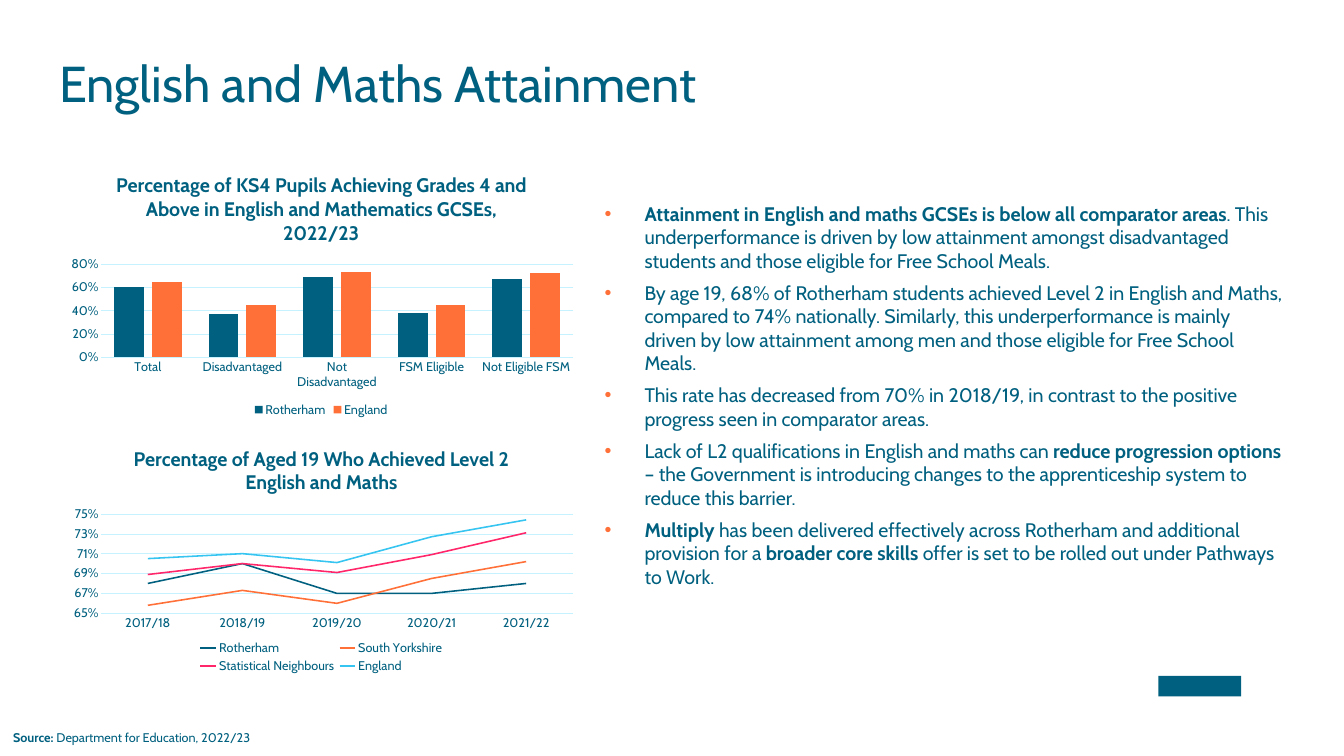
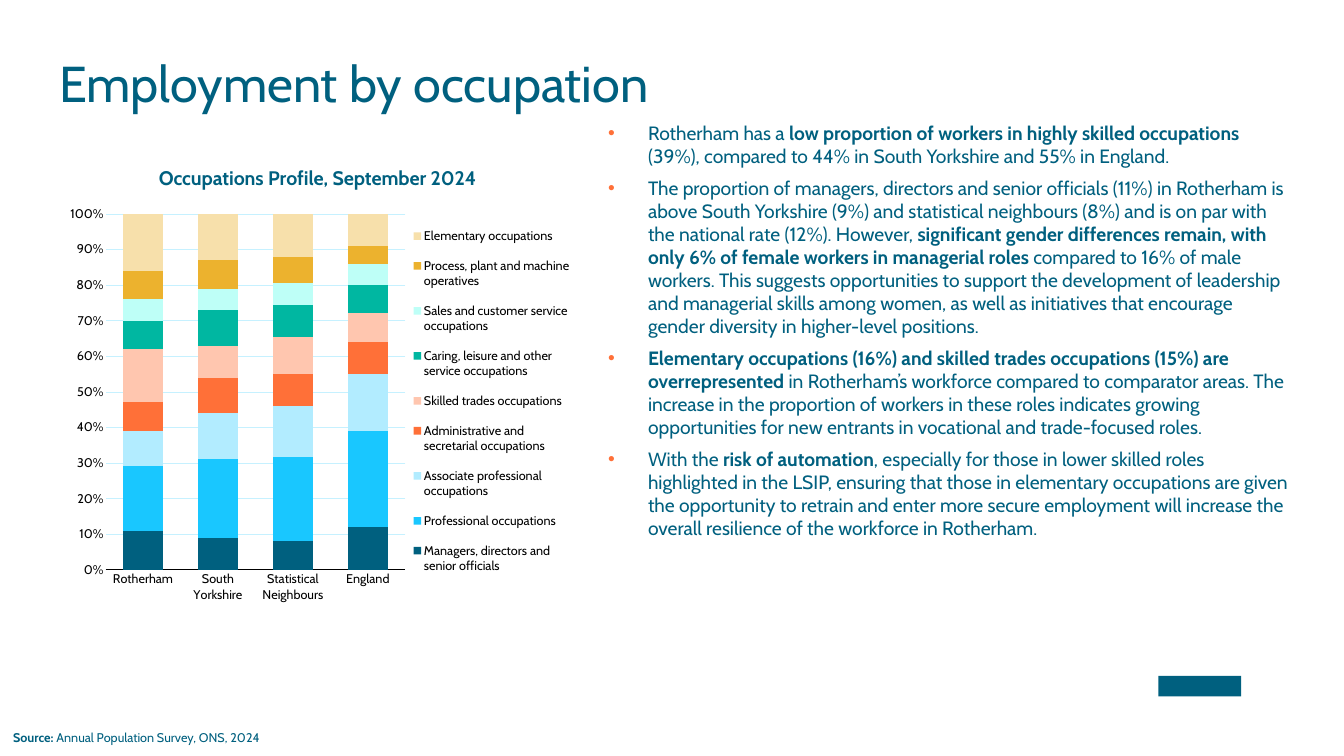
from lxml.etree import SubElement
from pptx import Presentation
from pptx.chart.data import CategoryChartData
from pptx.dml.color import RGBColor
from pptx.enum.chart import XL_CHART_TYPE as ChartType
from pptx.enum.chart import XL_LEGEND_POSITION as LegendPosition
from pptx.enum.chart import XL_TICK_MARK as TickMark
from pptx.enum.shapes import MSO_SHAPE as ShapeType
from pptx.enum.text import MSO_AUTO_SIZE as AutoSize
from pptx.oxml import parse_xml
from pptx.oxml.ns import nsdecls, qn
from pptx.util import Inches, Pt

FONT = "Cabin"
COLOURS = {
    "teal": "00607F", "orange": "FF7038", "pink": "FF266A", "blue": "36C5F0",
    "grid": "C6F1FF", "black": "000000", "sky": "19C7FF", "pale blue": "B2ECFF",
    "peach": "FFC6AF", "green": "00B7A1", "mint": "BEFFF7", "gold": "ECB22E",
    "sand": "F7E0AB",
}


def rgb(name):
    return RGBColor.from_string(COLOURS[name])


def style_font(font, size, colour="teal", bold=False):
    font.name, font.size, font.bold = FONT, Pt(size), bold
    font.color.rgb = rgb(colour)


def layout_element(x, y, width, height, inner=False):
    """Return a manual chart layout in fractions of the chart area."""
    layout = parse_xml(f"<c:layout {nsdecls('c')}><c:manualLayout/></c:layout>")
    settings = [("layoutTarget", "inner")] if inner else []
    settings += [("xMode", "edge"), ("yMode", "edge"),
                 ("x", x), ("y", y), ("w", width), ("h", height)]
    for tag, value in settings:
        SubElement(layout[0], qn(f"c:{tag}")).set("val", str(value))
    return layout


class Deck:
    """Holds the shared style and the slide being built."""

    def __init__(self):
        self.presentation = Presentation()
        self.presentation.slide_width = Inches(26.65)
        self.presentation.slide_height = Inches(15)
        self.slide = None

    def start_slide(self, title, source):
        self.slide = self.presentation.slides.add_slide(
            self.presentation.slide_layouts[6])
        self.logo_block()
        frame = self.text_box(1.17, 1.05, 22.99, 1.72)
        paragraph = frame.paragraphs[0]
        paragraph.line_spacing = Pt(85)
        self.add_runs(paragraph, title, 72)

        frame = self.text_box(0.16, 14.44, 13.32, 0.4, inset=None)
        frame.auto_size = AutoSize.SHAPE_TO_FIT_TEXT
        self.add_runs(frame.paragraphs[0], f"**Source: **{source}", 18)

    def logo_block(self):
        shape = self.slide.shapes.add_shape(
            ShapeType.RECTANGLE, Inches(22.97), Inches(13.41),
            Inches(1.64), Inches(0.41))
        shape.shadow.inherit = False
        shape.fill.solid()
        shape.fill.fore_color.rgb = rgb("teal")
        shape.line.fill.background()

    def text_box(self, left, top, width, height, inset=0):
        frame = self.slide.shapes.add_textbox(
            Inches(left), Inches(top), Inches(width), Inches(height)).text_frame
        frame.word_wrap = True
        if inset is not None:
            frame.margin_left = frame.margin_right = Inches(inset)
            frame.margin_top = frame.margin_bottom = Inches(inset)
        return frame

    def add_runs(self, paragraph, text, size):
        """Add the text as runs; parts between ** marks are bold."""
        for index, part in enumerate(text.split("**")):
            if part:
                run = paragraph.add_run()
                run.text = part
                style_font(run.font, size, bold=index % 2 == 1)

    def bullets(self, left, top, height, size, texts):
        frame = self.text_box(left, top, 13.5, height)
        for index, text in enumerate(texts):
            paragraph = frame.add_paragraph() if index else frame.paragraphs[0]
            paragraph.space_after = Pt(12)
            properties = paragraph._p.get_or_add_pPr()
            properties.set("marL", str(Inches(0.79)))
            properties.set("indent", str(-Inches(0.79)))
            colour = SubElement(properties, qn("a:buClr"))
            SubElement(colour, qn("a:srgbClr")).set("val", COLOURS["orange"])
            SubElement(properties, qn("a:buFont")).set("typeface", "Arial")
            SubElement(properties, qn("a:buChar")).set("char", "•")
            self.add_runs(paragraph, text, size)

    def chart(self, kind, box, title, categories, series, plot, legend=None,
              legend_side=LegendPosition.BOTTOM, scale=None, overlap=None,
              text="teal", axis="grid"):
        """Add a chart; series holds (name, colour, values), scale (min, max, step)."""
        data = CategoryChartData()
        data.categories = categories
        for name, _, values in series:
            data.add_series(name, values)
        chart = self.slide.shapes.add_chart(
            kind, *(Inches(length) for length in box), data).chart
        style_font(chart.font, 18, text)

        chart.has_title = True
        run = chart.chart_title.text_frame.paragraphs[0].add_run()
        run.text = title
        style_font(run.font, 28, bold=True)
        chart.chart_title.include_in_layout = False

        self.axes(chart, scale, text, axis)
        self.legend(chart, legend_side, legend, text)
        self.colour_series(chart, kind, series, overlap)

        plot_area = chart.element.xpath(".//c:plotArea")[0]
        for old in plot_area.findall(qn("c:layout")):
            plot_area.remove(old)
        plot_area.insert(0, layout_element(*plot, inner=True))

    def axes(self, chart, scale, text, axis_colour):
        for axis in (chart.category_axis, chart.value_axis):
            axis.major_tick_mark = axis.minor_tick_mark = TickMark.NONE
            style_font(axis.tick_labels.font, 18, text)
        line = chart.category_axis.format.line
        line.color.rgb, line.width = rgb(axis_colour), Pt(0.75)

        values = chart.value_axis
        values.format.line.fill.background()
        values.has_major_gridlines = True
        grid = values.major_gridlines.format.line
        grid.color.rgb, grid.width = rgb("grid"), Pt(0.75)
        values.tick_labels.number_format = "0%"
        values.tick_labels.number_format_is_linked = False
        if scale:
            values.minimum_scale, values.maximum_scale, values.major_unit = scale

    def legend(self, chart, side, layout, text):
        chart.has_legend = True
        chart.legend.position = side
        chart.legend.include_in_layout = False
        style_font(chart.legend.font, 18, text)
        if layout:
            element = chart.element.xpath(".//c:legend")[0]
            for old in element.findall(qn("c:layout")):
                element.remove(old)
            element.find(qn("c:legendPos")).addnext(layout_element(*layout))

    def colour_series(self, chart, kind, series, overlap):
        plot = chart.plots[0]
        plot.vary_by_categories = False
        if overlap is not None:
            plot.gap_width, plot.overlap = 90, overlap
        for item, (_, colour, _) in zip(plot.series, series):
            if kind == ChartType.LINE:
                item.smooth = False
                item.format.line.color.rgb = rgb(colour)
                item.format.line.width = Pt(2.25)
            else:
                item.format.fill.solid()
                item.format.fill.fore_color.rgb = rgb(colour)


def attainment_slide(deck):
    deck.start_slide("English and Maths Attainment",
                     "Department for Education, 2022/23")
    deck.bullets(11.99, 4, 8.58, 28, [
        "**Attainment in English and maths GCSEs is below all comparator areas**. "
        "This underperformance is driven by low attainment amongst disadvantaged "
        "students and those eligible for Free School Meals.",
        "By age 19, 68% of Rotherham students achieved Level 2 in English and Maths, "
        "compared to 74% nationally. Similarly, this underperformance is mainly driven "
        "by low attainment among men and those eligible for Free School Meals.",
        "This rate has decreased from 70% in 2018/19, in contrast to the positive "
        "progress seen in comparator areas.",
        "Lack of L2 qualifications in English and maths can **reduce progression "
        "options** – the Government is introducing changes to the apprenticeship "
        "system to reduce this barrier.",
        "**Multiply** has been delivered effectively across Rotherham and additional "
        "provision for a **broader core skills **offer is set to be rolled out under "
        "Pathways to Work.",
    ])
    deck.chart(
        ChartType.COLUMN_CLUSTERED, (1.16, 3.18, 10.42, 5.15),
        "Percentage of KS4 Pupils Achieving Grades 4 and Above in English and "
        "Mathematics GCSEs, 2022/23",
        ["Total", "Disadvantaged", "Not Disadvantaged", "FSM Eligible",
         "Not Eligible FSM"],
        [("Rotherham", "teal", (0.6, 0.37, 0.69, 0.38, 0.67)),
         ("England", "orange", (0.65, 0.45, 0.73, 0.45, 0.72))],
        plot=(0.08, 0.4, 0.9, 0.36), scale=(0, 0.8, 0.2), overlap=-27)
    deck.chart(
        ChartType.LINE, (1.16, 8.61, 10.42, 4.81),
        "Percentage of Aged 19 Who Achieved Level 2 English and Maths",
        ["2017/18", "2018/19", "2019/20", "2020/21", "2021/22"],
        [("Rotherham", "teal", (0.68, 0.7, 0.67, 0.67, 0.68)),
         ("South Yorkshire", "orange", (0.658, 0.673, 0.66, 0.685, 0.702)),
         ("Statistical Neighbours", "pink", (0.689, 0.7, 0.691, 0.709, 0.731)),
         ("England", "blue", (0.705, 0.71, 0.701, 0.727, 0.744))],
        plot=(0.08, 0.33, 0.9, 0.41), legend=(0.26, 0.84, 0.48, 0.16),
        scale=(0.65, 0.75, 0.02))


def occupation_slide(deck):
    deck.start_slide("Employment by occupation",
                     "Annual Population Survey, ONS, 2024")
    deck.bullets(12.06, 2.41, 11.33, 27.5, [
        "Rotherham has a **low proportion of workers in highly skilled occupations** "
        "(39%), compared to 44% in South Yorkshire and 55% in England.",
        "The proportion of managers, directors and senior officials (11%) in Rotherham "
        "is above South Yorkshire (9%) and statistical neighbours (8%) and is on par "
        "with the national rate (12%). However, **significant gender differences "
        "remain, with only 6% of female workers in managerial roles **compared to 16% "
        "of male workers. This suggests opportunities to support the development of "
        "leadership and managerial skills among women, as well as initiatives that "
        "encourage gender diversity in higher-level positions.",
        "**Elementary occupations (16%) and skilled trades occupations (15%) are "
        "overrepresented **in Rotherham’s workforce compared to comparator areas. The "
        "increase in the proportion of workers in these roles indicates growing "
        "opportunities for new entrants in vocational and trade-focused roles.",
        "With the **risk of automation**, especially for those in lower skilled roles "
        "highlighted in the LSIP, ensuring that those in elementary occupations are "
        "given the opportunity to retrain and enter more secure employment will "
        "increase the overall resilience of the workforce in Rotherham.",
    ])
    deck.chart(
        ChartType.COLUMN_STACKED_100, (1.17, 2.96, 10.25, 9.17),
        "Occupations Profile, September 2024",
        ["Rotherham", "South Yorkshire", "Statistical Neighbours", "England"],
        [("Managers, directors and senior officials", "teal", (11, 9, 8, 12)),
         ("Professional occupations", "sky", (18, 22, 23, 27)),
         ("Associate professional occupations", "pale blue", (10, 13, 14, 16)),
         ("Administrative and secretarial occupations", "orange", (8, 10, 9, 9)),
         ("Skilled trades occupations", "peach", (15, 9, 10, 8)),
         ("Caring, leisure and other service occupations", "green", (8, 10, 9, 8)),
         ("Sales and customer service occupations", "mint", (6, 6, 6, 6)),
         ("Process, plant and machine operatives", "gold", (8, 8, 7, 5)),
         ("Elementary occupations", "sand", (16, 13, 12, 9))],
        plot=(0.09, 0.14, 0.58, 0.77), legend=(0.69, 0.14, 0.31, 0.81),
        legend_side=LegendPosition.RIGHT, overlap=100, text="black", axis="black")


def main():
    deck = Deck()
    attainment_slide(deck)
    occupation_slide(deck)
    deck.presentation.save("out.pptx")


if __name__ == "__main__":
    main()
